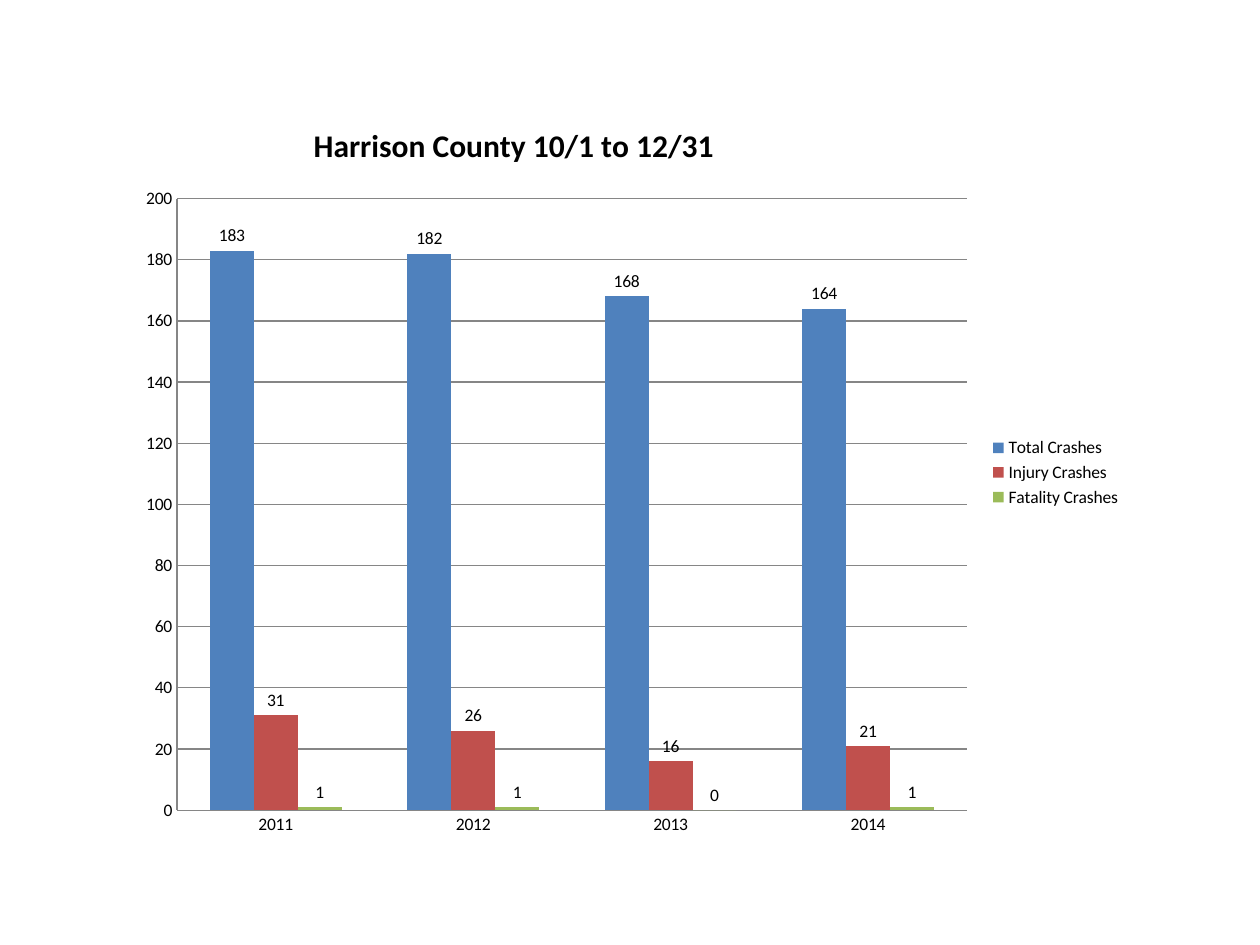
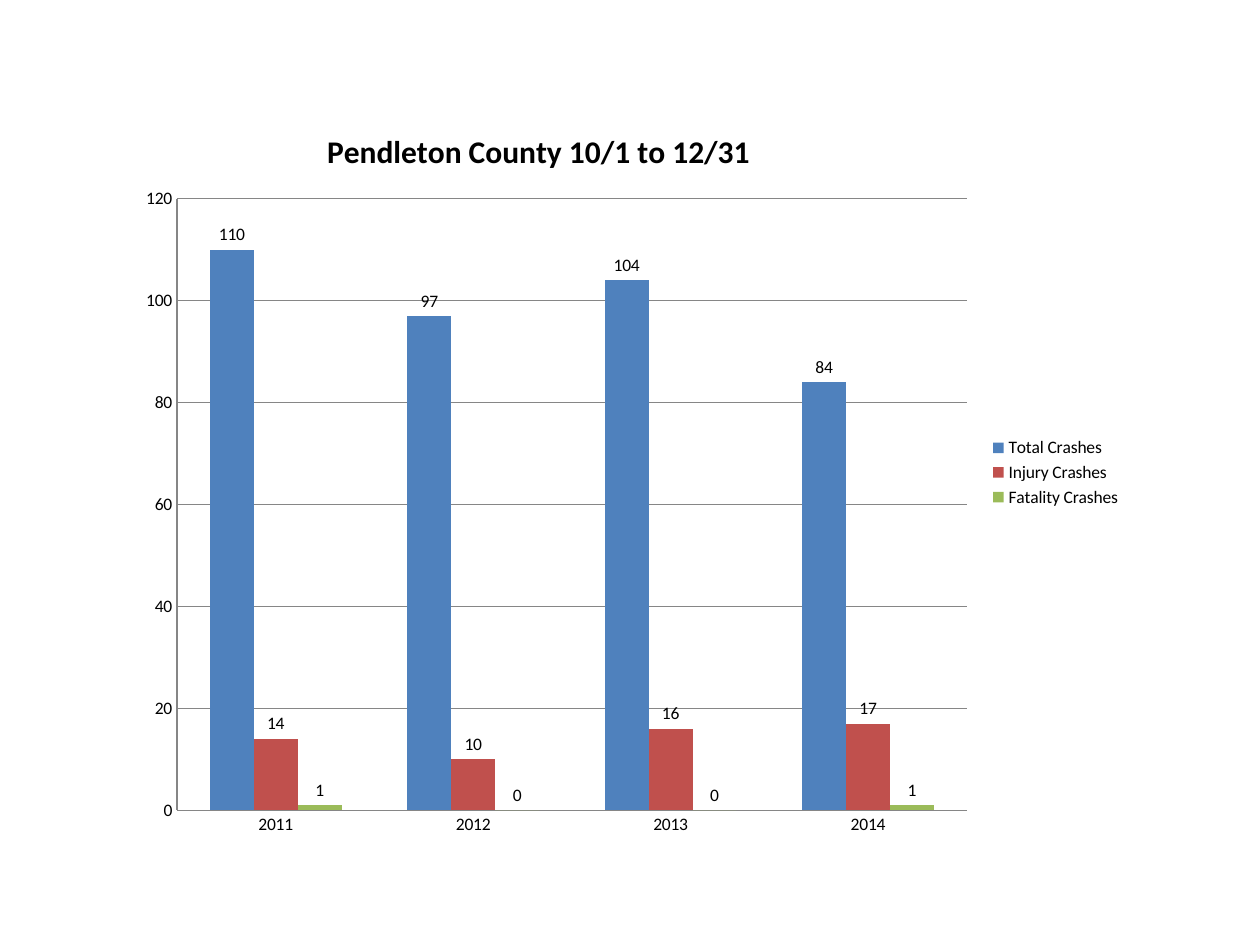
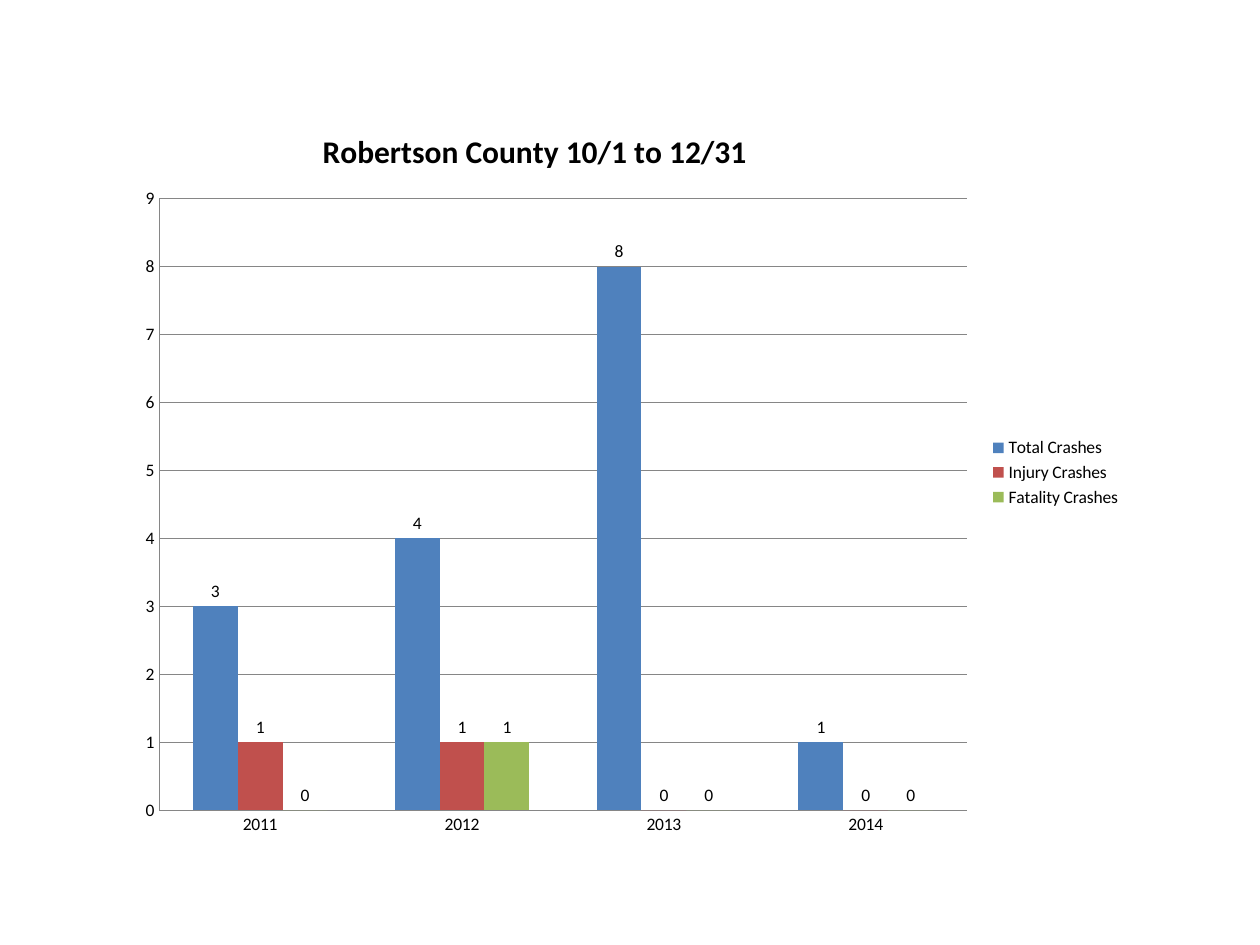
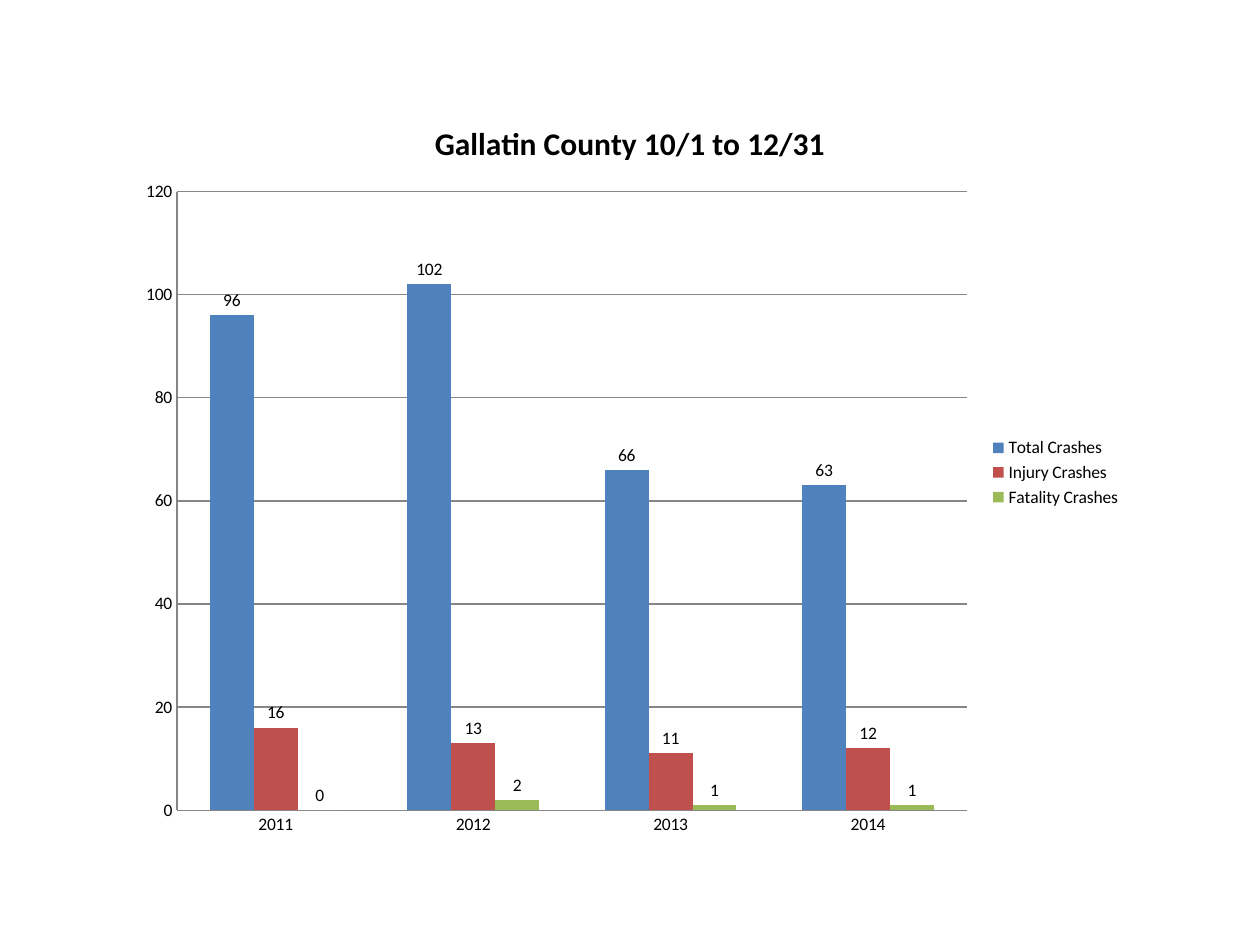
"""Build four slides of county crash charts for the last quarter of the year."""
from dataclasses import dataclass
from typing import Optional

from lxml.etree import SubElement
from pptx import Presentation
from pptx.chart.chart import Chart
from pptx.chart.data import CategoryChartData
from pptx.dml.color import RGBColor
from pptx.enum.chart import XL_CHART_TYPE as ChartType
from pptx.enum.chart import XL_LABEL_POSITION as LabelPos
from pptx.enum.chart import XL_LEGEND_POSITION as LegendPos
from pptx.enum.chart import XL_TICK_MARK as TickMark
from pptx.oxml.ns import qn
from pptx.util import Cm, Pt


@dataclass(frozen=True)
class Theme:
    font: str = "Calibri"
    text: RGBColor = RGBColor(0x00, 0x00, 0x00)
    line: RGBColor = RGBColor(0x86, 0x86, 0x86)
    series: tuple[RGBColor, ...] = (
        RGBColor(0x4F, 0x81, 0xBD),
        RGBColor(0xC0, 0x50, 0x4D),
        RGBColor(0x9B, 0xBB, 0x59),
    )
    title_size: Pt = Pt(18)
    body_size: Pt = Pt(10)
    line_width: Pt = Pt(0.75)


@dataclass(frozen=True)
class County:
    name: str
    total: tuple[int, ...]
    injury: tuple[int, ...]
    fatality: tuple[int, ...]
    axis_max: int
    axis_step: int
    title_at: Optional[tuple[Cm, Cm]] = None
    plot_left: Cm = Cm(1.03)
    plot_top: Cm = Cm(2.1)


THEME = Theme()
YEARS = ("2011", "2012", "2013", "2014")
SERIES_NAMES = ("Total Crashes", "Injury Crashes", "Fatality Crashes")
SLIDE_W, SLIDE_H = Cm(25.4), Cm(19.05)
CHART_W, CHART_H = Cm(20.32), Cm(15.24)
PLOT_RIGHT, PLOT_BOTTOM = Cm(16.95), Cm(14.43)

COUNTIES = (
    County("Harrison", (183, 182, 168, 164), (31, 26, 16, 21), (1, 1, 0, 1),
           200, 20, title_at=(Cm(3.67), Cm(0.47))),
    County("Pendleton", (110, 97, 104, 84), (14, 10, 16, 17), (1, 0, 0, 1),
           120, 20, title_at=(Cm(3.94), Cm(0.6))),
    County("Robertson", (3, 4, 8, 1), (1, 1, 0, 0), (0, 1, 0, 0),
           9, 1, title_at=(Cm(3.85), Cm(0.6)), plot_left=Cm(0.67)),
    County("Gallatin", (96, 102, 66, 63), (16, 13, 11, 12), (0, 2, 1, 1),
           120, 20, plot_top=Cm(1.96)),
)


def set_layout(parent, index: int, left: int, top: int,
               size: Optional[tuple[int, int]] = None) -> None:
    """Place a chart part at a fixed spot inside the chart frame."""
    for old in parent.findall(qn("c:layout")):
        parent.remove(old)
    layout = SubElement(parent, qn("c:layout"))
    parent.insert(index, layout)
    manual = SubElement(layout, qn("c:manualLayout"))
    values = {"xMode": "edge", "yMode": "edge",
              "x": left / CHART_W, "y": top / CHART_H}
    if size:
        values = {"layoutTarget": "inner", **values,
                  "w": size[0] / CHART_W, "h": size[1] / CHART_H}
    for tag, value in values.items():
        SubElement(manual, qn(f"c:{tag}")).set("val", str(value))


def style_line(line) -> None:
    """Give an axis or gridline the shared grey stroke."""
    line.color.rgb = THEME.line
    line.width = THEME.line_width


def add_title(chart: Chart, county: County) -> None:
    """Write the chart title and move it where the county asks."""
    chart.has_title = True
    title = chart.chart_title
    title.include_in_layout = False
    r = title.text_frame.paragraphs[0].add_run()
    r.text = f"{county.name} County 10/1 to 12/31"
    r.font.name = THEME.font
    r.font.size = THEME.title_size
    r.font.bold = True
    r.font.color.rgb = THEME.text
    if county.title_at:
        set_layout(title._element, 1, *county.title_at)


def style_axes(chart: Chart, county: County) -> None:
    """Set the scale, strokes and gridlines of both axes."""
    for axis in (chart.category_axis, chart.value_axis):
        axis.major_tick_mark = axis.minor_tick_mark = TickMark.NONE
        style_line(axis.format.line)
    axis = chart.value_axis
    axis.minimum_scale, axis.maximum_scale = 0, county.axis_max
    axis.major_unit = county.axis_step
    axis.has_major_gridlines = True
    style_line(axis.major_gridlines.format.line)


def style_columns(chart: Chart) -> None:
    """Colour the columns and show their values above them."""
    plot = chart.plots[0]
    plot.gap_width, plot.overlap = 150, 0
    plot.vary_by_categories = False
    for series, color in zip(plot.series, THEME.series):
        series.format.fill.solid()
        series.format.fill.fore_color.rgb = color
        series.data_labels.show_value = True
        series.data_labels.position = LabelPos.OUTSIDE_END


def add_county_slide(prs: Presentation, county: County) -> None:
    """Add one slide with the chart of one county."""
    s = prs.slides.add_slide(prs.slide_layouts[6])
    data = CategoryChartData()
    data.categories = YEARS
    counts = (county.total, county.injury, county.fatality)
    for name, values in zip(SERIES_NAMES, counts):
        data.add_series(name, values)
    chart = s.shapes.add_chart(
        ChartType.COLUMN_CLUSTERED, (SLIDE_W - CHART_W) // 2,
        (SLIDE_H - CHART_H) // 2, CHART_W, CHART_H, data).chart
    chart.font.name = THEME.font
    chart.font.size = THEME.body_size
    chart.font.color.rgb = THEME.text
    add_title(chart, county)
    style_axes(chart, county)
    style_columns(chart)
    chart.has_legend = True
    chart.legend.position = LegendPos.RIGHT
    chart.legend.include_in_layout = False
    size = (PLOT_RIGHT - county.plot_left, PLOT_BOTTOM - county.plot_top)
    set_layout(chart._chartSpace.chart.plotArea, 0,
               county.plot_left, county.plot_top, size)


def main() -> None:
    """Build and save the presentation."""
    prs = Presentation()
    prs.slide_width, prs.slide_height = SLIDE_W, SLIDE_H
    for county in COUNTIES:
        add_county_slide(prs, county)
    prs.save("out.pptx")


if __name__ == "__main__":
    main()
